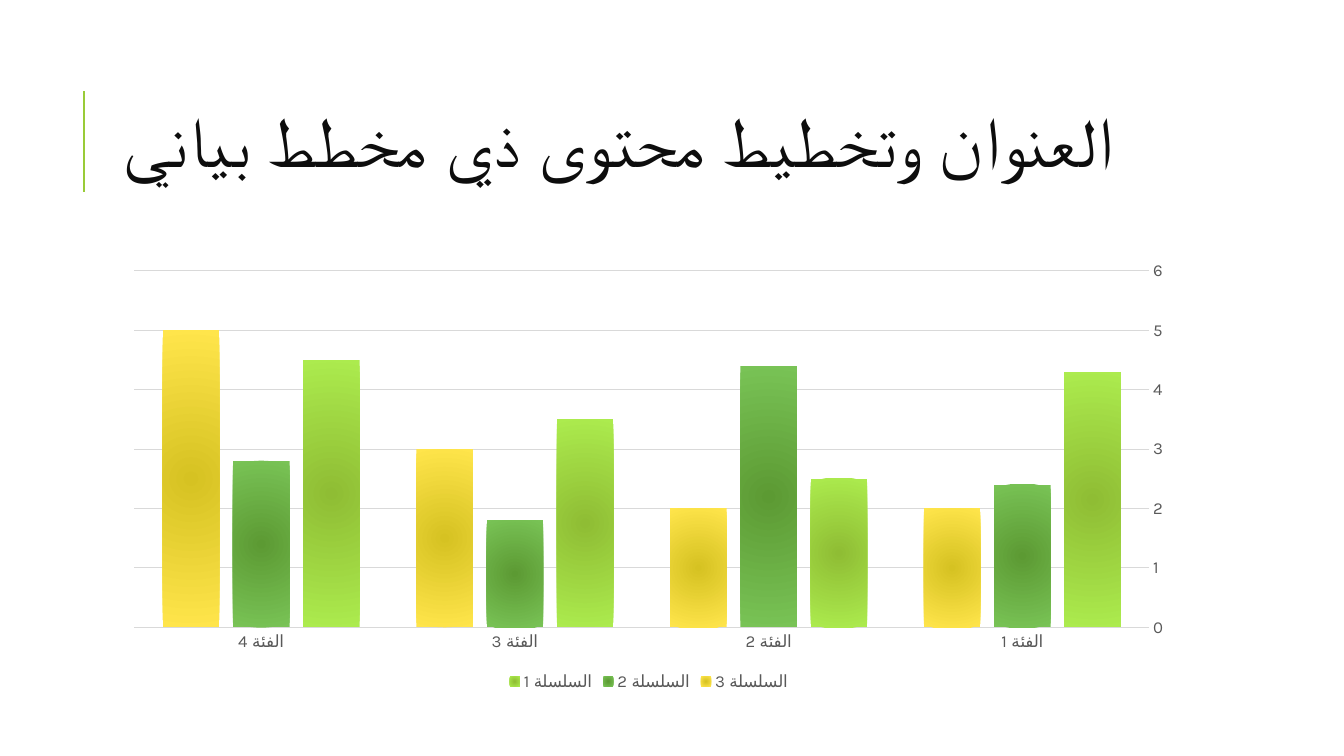
from lxml import etree
from pptx import Presentation
from pptx.chart import data
from pptx.dml import color
from pptx.enum import chart as chart_enum, shapes, text
from pptx.oxml import ns
from pptx.util import Inches, Pt

COLORS = {"accent": "99CB38", "title": "0D0D0D", "label": "595959", "grid": "D9D9D9", "black": "000000"}
FONT = "Karla"
CATEGORIES = ["الفئة 1", "الفئة 2", "الفئة 3", "الفئة 4"]
SERIES = [
    ("السلسلة 1", (4.3, 2.5, 3.5, 4.5), ("8FBD34", "ACEB4E")),
    ("السلسلة 2", (2.4, 4.4, 1.8, 2.8), ("5C9A33", "79C356")),
    ("السلسلة 3", (2, 2, 3, 5), ("D6C222", "FFE54B")),
]


def rgb(value):
    return color.RGBColor.from_string(value)


def style_font(font, size, fill, name=FONT):
    font.size = Pt(size)
    font.name = name
    font.color.rgb = rgb(fill)
    complex_font = etree.SubElement(font._rPr, ns.qn("a:cs"))
    complex_font.set("typeface", name)


def style_line(line, fill, width):
    line.color.rgb = rgb(fill)
    line.width = Pt(width)


def add_accent_line(slide, left, top, height):
    line = slide.shapes.add_connector(
        shapes.MSO_CONNECTOR.STRAIGHT,
        Inches(left), Inches(top + height), Inches(left), Inches(top))
    style_line(line.line, COLORS["accent"], 1.5)
    etree.SubElement(line._element.spPr, ns.qn("a:effectLst"))


def add_title(slide, left, top, width, height):
    title = slide.shapes.title
    title.left, title.top = Inches(left), Inches(top)
    title.width, title.height = Inches(width), Inches(height)
    frame = title.text_frame
    frame.text = "العنوان وتخطيط محتوى ذي مخطط بياني"
    frame.word_wrap = True
    frame.auto_size = text.MSO_AUTO_SIZE.NONE
    frame.vertical_anchor = text.MSO_ANCHOR.MIDDLE
    paragraph = frame.paragraphs[0]
    paragraph.alignment = text.PP_ALIGN.LEFT
    paragraph.line_spacing = 0.8
    paragraph._p.get_or_add_pPr().set("rtl", "1")
    font = paragraph.runs[0].font
    style_font(font, 50, COLORS["title"])
    font._rPr.set("spc", "100")


def fill_radially(series, stops):
    fill = series.format.fill
    fill.gradient()
    for stop, position, value in zip(fill.gradient_stops, (0, 1), stops):
        stop.position = position
        stop.color.rgb = rgb(value)
    gradient = series._element.find(".//" + ns.qn("a:gradFill"))
    gradient.remove(gradient.find(ns.qn("a:lin")))
    circle = etree.SubElement(gradient, ns.qn("a:path"))
    circle.set("path", "circle")
    center = etree.SubElement(circle, ns.qn("a:fillToRect"))
    for side in "ltrb":
        center.set(side, "100000")


def style_axes(chart):
    for axis in (chart.category_axis, chart.value_axis):
        axis.major_tick_mark = axis.minor_tick_mark = chart_enum.XL_TICK_MARK.NONE
        style_font(axis.tick_labels.font, 12, COLORS["label"])
    chart.category_axis.reverse_order = True
    style_line(chart.category_axis.format.line, COLORS["grid"], 1)
    value_axis = chart.value_axis
    value_axis.minimum_scale, value_axis.maximum_scale, value_axis.major_unit = 0, 6, 1
    value_axis.format.line.fill.background()
    value_axis.has_major_gridlines = True
    style_line(value_axis.major_gridlines.format.line, COLORS["grid"], 0.75)


def add_column_chart(slide, left, top, width, height):
    chart_data = data.CategoryChartData()
    chart_data.categories = CATEGORIES
    for name, values, _ in SERIES:
        chart_data.add_series(name, values)
    chart = slide.shapes.add_chart(
        chart_enum.XL_CHART_TYPE.COLUMN_CLUSTERED,
        Inches(left), Inches(top), Inches(width), Inches(height), chart_data).chart
    style_font(chart.font, 10, COLORS["black"], "Calibri")
    chart.has_title = False
    chart.has_legend = True
    chart.legend.position = chart_enum.XL_LEGEND_POSITION.BOTTOM
    chart.legend.include_in_layout = False
    style_font(chart.legend.font, 12, COLORS["label"])
    style_axes(chart)
    plot = chart.plots[0]
    plot.gap_width = 100
    plot.overlap = -24
    plot.vary_by_categories = False
    for series, (_, _, stops) in zip(plot.series, SERIES):
        fill_radially(series, stops)


def main():
    presentation = Presentation()
    presentation.slide_width = Inches(13.33)
    presentation.slide_height = Inches(7.5)
    slide = presentation.slides.add_slide(presentation.slide_layouts[5])
    add_accent_line(slide, 0.83, 0.9, 1)
    add_title(slide, 1.12, 0.64, 10.63, 1.64)
    add_column_chart(slide, 1.12, 2.5, 10.63, 4.4)
    presentation.save("out.pptx")


if __name__ == "__main__":
    main()
